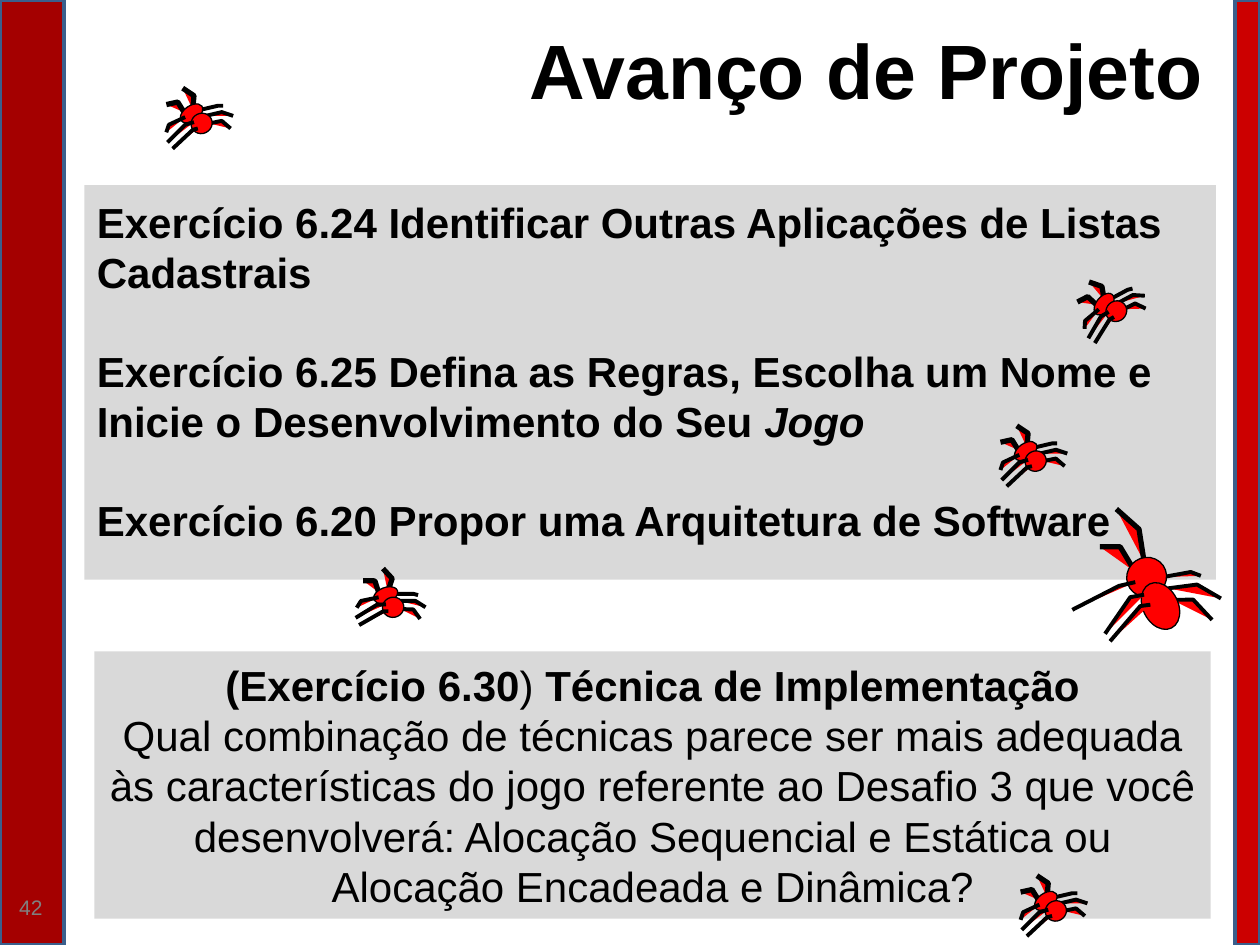
from math import cos, radians, sin

from pptx import Presentation
from pptx.dml.color import RGBColor
from pptx.enum.shapes import MSO_SHAPE
from pptx.enum.text import MSO_ANCHOR, PP_ALIGN
from pptx.util import Inches, Pt

COLORS = {
    "left_bar": "A40000", "right_bar": "CC0000", "bar_line": "3A5F8C",
    "panel": "D9D9D9", "text": "000000", "number": "808080", "spider": "FF0000",
}
BASE_TILT = 63.5
HEAD_TILT = -8.4
SMALL_SPIDER = {
    "front": [
        [(-.15, -.28), (-.06, -.22), (-.07, -.11)],
        [(-.14, -.09), (-.19, -.17), (-.28, -.15)],
    ],
    "right": [
        [(0, -.11), (.13, -.14), (.17, -.14)],
        [(.03, -.06), (.16, -.09), (.25, -.06)],
        [(.06, 0), (.16, -.02), (.23, .04)],
    ],
    "head": (-.08, -.08, .12, .2),
    "body": (0, 0, .16, .17),
    "left": [
        [(-.06, -.01), (-.13, .01), (-.27, .15)],
        [(-.03, .04), (-.07, .05), (-.23, .2)],
        [(-.28, .07), (-.26, .01), (-.13, -.05)],
    ],
}
BIG_SPIDER = {
    "front": [
        [(-.35, -.77), (-.17, -.61), (-.13, -.35)],
        [(-.2, -.27), (-.32, -.47), (-.48, -.47)],
    ],
    "right": [
        [(.02, -.23), (.24, -.27), (.32, -.24)],
        [(.06, -.14), (.29, -.17), (.48, -.06)],
        [(.09, -.05), (.26, -.05), (.41, .11)],
    ],
    "head": (-.11, -.23, .31, .32),
    "body": (0, 0, .39, .28),
    "left": [
        [(-.13, -.09), (-.24, -.07), (-.44, .22)],
        [(-.08, -.01), (-.16, 0), (-.4, .28)],
        [(-.2, -.19), (-.33, -.16), (-.7, .03)],
    ],
}
SPIDERS = [
    (SMALL_SPIDER, 1.6, .98, 63.5),
    (SMALL_SPIDER, 8.22, 3.66, 63.5),
    (BIG_SPIDER, 9.21, 4.81, 63.5),
    (SMALL_SPIDER, 8.86, 2.47, 48.5),
    (SMALL_SPIDER, 8.38, 7.23, 63.5),
    (SMALL_SPIDER, 3.12, 4.82, 76.9),
]
EXERCISES = [
    [("Exercício 6.24 Identificar Outras Aplicações de Listas Cadastrais", {"bold": True})],
    [("Exercício 6.25 Defina as Regras, Escolha um Nome e Inicie o Desenvolvimento do Seu ",
      {"bold": True}), ("Jogo", {"bold": True, "italic": True})],
    [("Exercício 6.20 Propor uma Arquitetura de Software", {"bold": True})],
]
TECHNIQUE = [
    [("(Exercício 6.30", {"bold": True}), (") ", {}),
     ("Técnica de Implementação", {"bold": True})],
    [("Qual combinação de técnicas parece ser mais adequada às características do jogo "
      "referente ao Desafio 3 que você desenvolverá: Alocação Sequencial e Estática ou "
      "Alocação Encadeada e Dinâmica?", {})],
]


def rgb(name):
    return RGBColor.from_string(COLORS[name])


def paint(s, fill, line=None, width=0):
    s.shadow.inherit = False
    s.fill.solid()
    s.fill.fore_color.rgb = rgb(fill)
    if line:
        s.line.color.rgb = rgb(line)
        s.line.width = Pt(width)
    else:
        s.line.fill.background()


def add_rect(shapes, box, fill, line=None, width=0):
    s = shapes.add_shape(MSO_SHAPE.RECTANGLE, *map(Inches, box))
    paint(s, fill, line, width)
    return s


def write(s, paragraphs, size, align, color="text", gap=0):
    tf = s.text_frame
    tf.word_wrap = True
    for i, runs in enumerate(paragraphs):
        p = tf.add_paragraph() if i else tf.paragraphs[0]
        p.alignment = align
        if i:
            p.space_before = Pt(gap)
        for text, style in runs:
            r = p.add_run()
            r.text = text
            r.font.color.rgb = rgb(color)
            values = {"name": "Arial", "size": Pt(size), "bold": False, **style}
            for key, value in values.items():
                setattr(r.font, key, value)
    return tf


def add_text(shapes, box, text, size, align, color="text", **style):
    s = shapes.add_textbox(*map(Inches, box))
    write(s, [[(text, style)]], size, align, color)


def turn(x, y, degrees):
    a = radians(degrees)
    return x * cos(a) - y * sin(a), x * sin(a) + y * cos(a)


def middle(values):
    return (min(values) + max(values)) / 2


def add_leg(shapes, points, x, y, tilt, width):
    flat = [turn(px, py, -BASE_TILT) for px, py in points]
    cx, cy = (middle(values) for values in zip(*flat))
    tx, ty = turn(cx, cy, tilt)
    placed = [(Inches(x + tx + px - cx), Inches(y + ty + py - cy)) for px, py in flat]
    builder = shapes.build_freeform(*placed[0])
    builder.add_line_segments(placed[1:], close=False)
    s = builder.convert_to_shape()
    s.rotation = tilt
    paint(s, "spider", "text", width)


def add_oval(shapes, oval, x, y, tilt, turned):
    ox, oy, w, h = oval
    dx, dy = turn(ox, oy, tilt - BASE_TILT)
    box = (x + dx - w / 2, y + dy - h / 2, w, h)
    s = shapes.add_shape(MSO_SHAPE.OVAL, *map(Inches, box))
    s.rotation = tilt + turned
    paint(s, "spider", "text", .75)


def add_spider(shapes, parts, x, y, tilt):
    group = shapes.add_group_shape().shapes
    for side, width in (("front", 3), ("right", 2.25)):
        for leg in parts[side]:
            add_leg(group, leg, x, y, tilt, width)
    add_oval(group, parts["head"], x, y, tilt, HEAD_TILT)
    add_oval(group, parts["body"], x, y, tilt, 0)
    for leg in parts["left"]:
        add_leg(group, leg, x, y, tilt, 2.25)


def main():
    prs = Presentation()
    prs.slide_width, prs.slide_height = Inches(10), Inches(7.5)
    shapes = prs.slides.add_slide(prs.slide_layouts[6]).shapes

    add_rect(shapes, (0, 0, .51, 7.5), "left_bar", "bar_line", 2)
    add_rect(shapes, (9.8, 0, .2, 7.5), "right_bar", "bar_line", 2)
    add_text(shapes, (.04, 7.05, .41, .4), "42", 12, PP_ALIGN.CENTER, "number")

    s = add_rect(shapes, (.67, 1.47, 8.98, 3.13), "panel")
    tf = write(s, EXERCISES, 24, PP_ALIGN.LEFT, gap=27.6)
    tf.vertical_anchor = MSO_ANCHOR.MIDDLE
    tf.margin_bottom = Inches(.24)

    add_text(shapes, (.83, .13, 8.82, .94), "Avanço de Projeto", 44, PP_ALIGN.RIGHT, bold=True)

    s = add_rect(shapes, (.75, 5.17, 8.86, 2.12), "panel")
    write(s, TECHNIQUE, 24, PP_ALIGN.CENTER).vertical_anchor = MSO_ANCHOR.MIDDLE

    for spider in SPIDERS:
        add_spider(shapes, *spider)
    prs.save("out.pptx")


if __name__ == "__main__":
    main()
